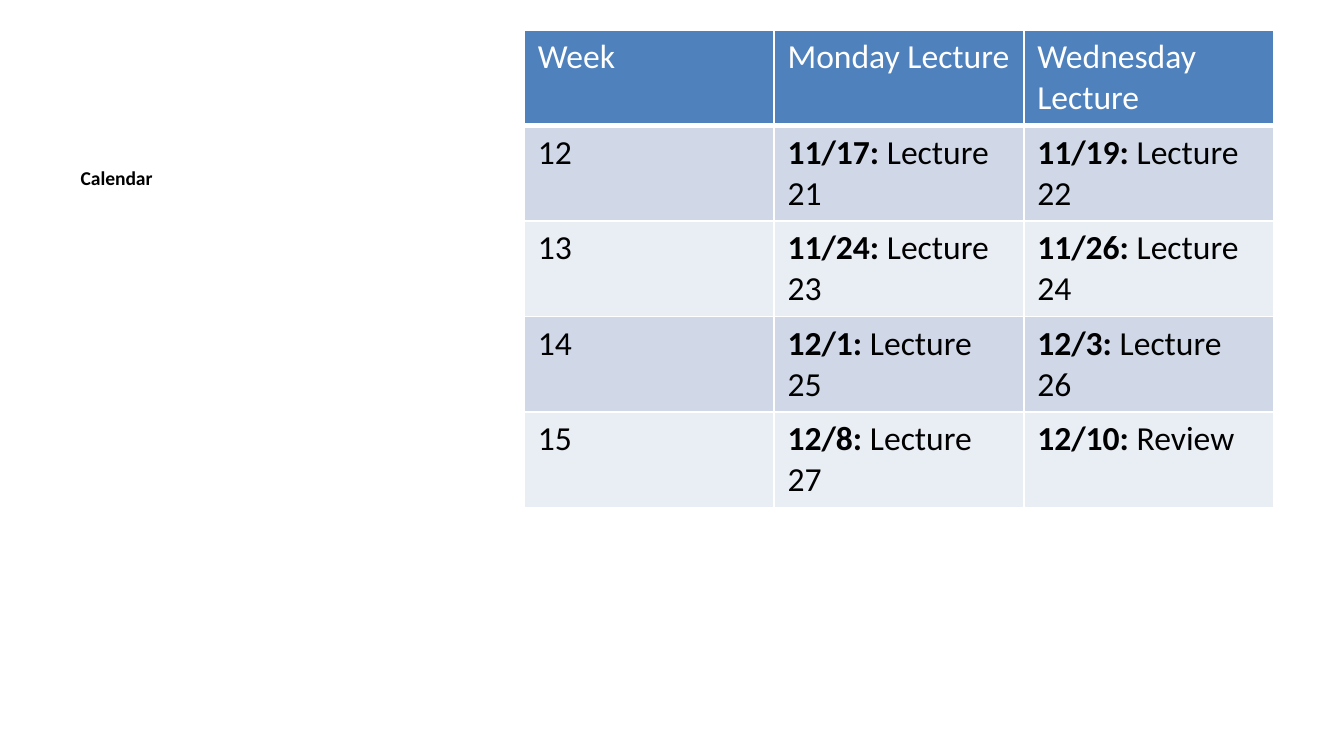
from dataclasses import dataclass

from lxml import etree
from pptx import Presentation
from pptx.dml.color import RGBColor
from pptx.enum.text import MSO_ANCHOR, MSO_AUTO_SIZE, PP_ALIGN
from pptx.oxml.ns import qn
from pptx.util import Cm, Pt

LEFT, TOP, NO_FIT = PP_ALIGN.LEFT, MSO_ANCHOR.TOP, MSO_AUTO_SIZE.NONE
TITLE_ONLY = 5
FONT = "Calibri"
COLORS = {
    "text": "000000",
    "white": "FFFFFF",
    "header": "4F81BD",
    "odd": "D0D8E8",
    "even": "E9EDF4",
}
HEADERS = ("Week", "Monday Lecture", "Wednesday Lecture")
COL_WIDTH, ROW_HEIGHT = Cm(4.72), Cm(1.8)


@dataclass
class Session:
    date: str
    topic: str


@dataclass
class Week:
    number: int
    monday: Session
    wednesday: Session


WEEKS = [
    Week(12, Session("11/17:", "Lecture 21"), Session("11/19:", "Lecture 22")),
    Week(13, Session("11/24:", "Lecture 23"), Session("11/26:", "Lecture 24")),
    Week(14, Session("12/1:", "Lecture 25"), Session("12/3:", "Lecture 26")),
    Week(15, Session("12/8:", "Lecture 27"), Session("12/10:", "Review")),
]


def add_text(p, text: str, *, size: float = 18, color: str = "text", bold: bool = False) -> None:
    r = p.add_run()
    r.text = text
    r.font.name = FONT
    r.font.size = Pt(size)
    r.font.bold = bold
    r.font.color.rgb = RGBColor.from_string(COLORS[color])


def set_borders(cell, bottom: float = 1) -> None:
    tc_pr = cell._tc.get_or_add_tcPr()
    for side, width in {"L": 1, "R": 1, "T": 1, "B": bottom}.items():
        ln = etree.SubElement(tc_pr, qn(f"a:ln{side}"), w=str(Pt(width)))
        fill = etree.SubElement(ln, qn("a:solidFill"))
        etree.SubElement(fill, qn("a:srgbClr"), val=COLORS["white"])


def style_cell(cell, fill: str, bottom: float = 1) -> None:
    set_borders(cell, bottom)
    cell.fill.solid()
    cell.fill.fore_color.rgb = RGBColor.from_string(COLORS[fill])


def add_title(s, text: str) -> None:
    sp = s.shapes.title
    sp.left, sp.top, sp.width, sp.height = Cm(1.27), Cm(3), Cm(8.36), Cm(9.78)
    tf = sp.text_frame
    tf.word_wrap, tf.auto_size, tf.vertical_anchor = True, NO_FIT, TOP
    p = tf.paragraphs[0]
    p.alignment = LEFT
    p.space_before = Pt(30)
    add_text(p, text, size=10.5, bold=True)


def add_calendar(s, weeks: list[Week]) -> None:
    rows, cols = len(weeks) + 1, len(HEADERS)
    table = s.shapes.add_table(rows, cols, Cm(9.91), Cm(0.57),
                               COL_WIDTH * cols, ROW_HEIGHT * rows).table
    for col, header in enumerate(HEADERS):
        cell = table.cell(0, col)
        style_cell(cell, "header", bottom=3)
        add_text(cell.text_frame.paragraphs[0], header, color="white")
    for row, week in enumerate(weeks, start=1):
        cells = [table.cell(row, col) for col in range(cols)]
        for cell in cells:
            style_cell(cell, "odd" if row % 2 else "even")
        add_text(cells[0].text_frame.paragraphs[0], str(week.number))
        for cell, session in zip(cells[1:], (week.monday, week.wednesday)):
            p = cell.text_frame.paragraphs[0]
            add_text(p, session.date, bold=True)
            add_text(p, f" {session.topic}")


def main() -> None:
    prs = Presentation()
    prs.slide_width, prs.slide_height = Cm(25.4), Cm(14.29)
    s = prs.slides.add_slide(prs.slide_layouts[TITLE_ONLY])
    add_title(s, "Calendar")
    add_calendar(s, WEEKS)
    prs.save("out.pptx")


if __name__ == "__main__":
    main()
